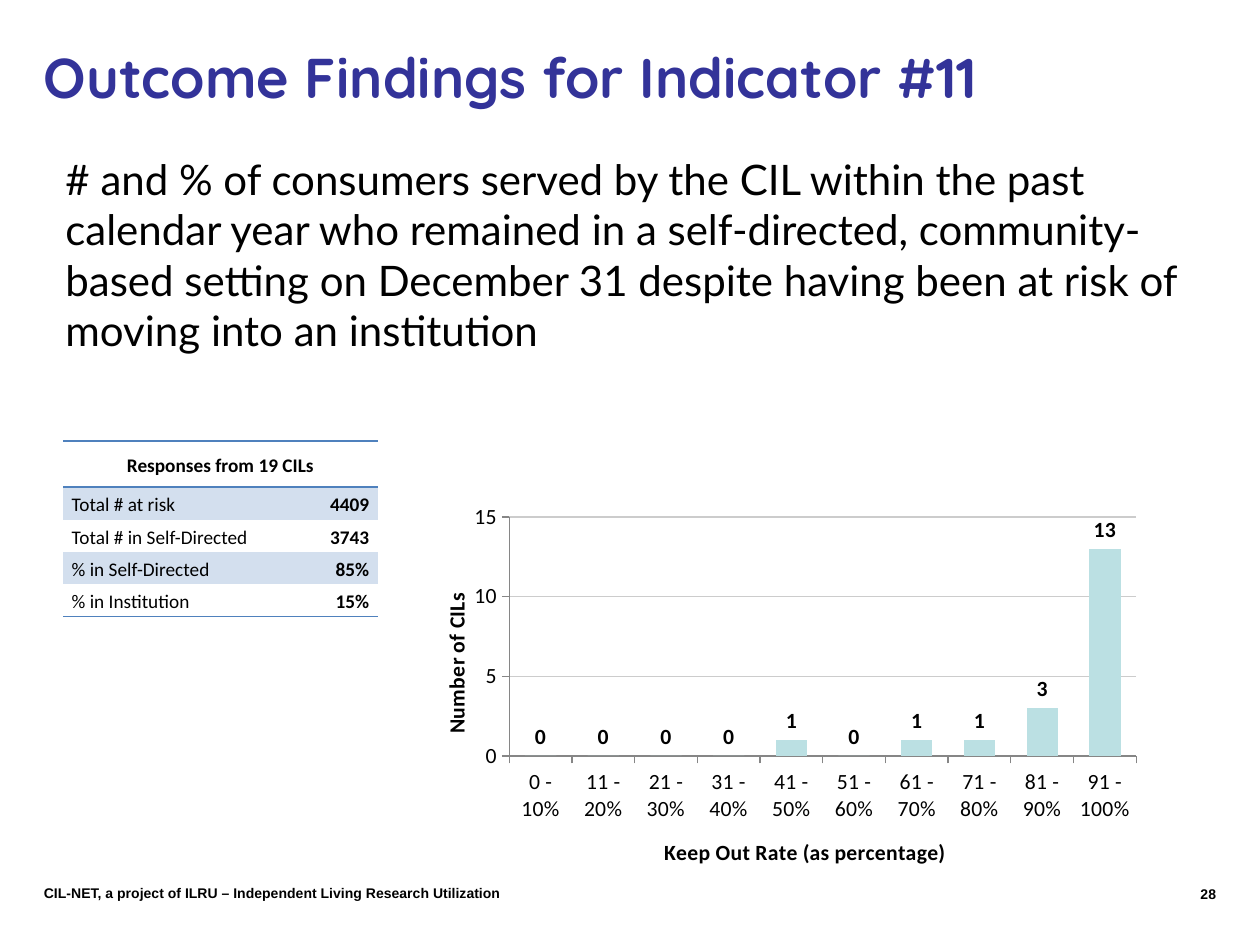
from lxml import etree
from pptx import Presentation
from pptx import util as u
from pptx.chart import data as chart_data
from pptx.dml import color
from pptx.enum import chart as chart_enum, text
from pptx.oxml import ns

Pt = u.Pt


def rgb(value):
    return color.RGBColor.from_string(value)


def write(frame, content, font="Calibri", size=11, fill="000000", bold=False,
          align=text.PP_ALIGN.LEFT, anchor=text.MSO_ANCHOR.TOP, spacing=None):
    frame.word_wrap = True
    frame.vertical_anchor = anchor
    paragraph = frame.paragraphs[0]
    paragraph.alignment = align
    paragraph.line_spacing = spacing
    run = paragraph.add_run()
    run.text = content
    run.font.name = font
    run.font.size = Pt(size)
    run.font.bold = bold
    run.font.color.rgb = rgb(fill)


presentation = Presentation()
presentation.slide_width = Pt(720)
presentation.slide_height = Pt(540)
slide = presentation.slides.add_slide(presentation.slide_layouts[6])

footer = {"font": "Arial", "size": 8, "bold": True}
boxes = [
    ((18, 12.24, 606, 62.64), "Outcome Findings for Indicator #11",
     {"font": "Quicksand", "size": 32, "fill": "333399", "bold": True,
      "anchor": text.MSO_ANCHOR.MIDDLE}),
    ((30.3, 84.24, 666, 131.76),
     "# and % of consumers served by the CIL within the past calendar year who "
     "remained in a self-directed, community-based setting on December 31 "
     "despite having been at risk of moving into an institution",
     {"font": "Lato", "size": 24}),
    ((18, 501.84, 360, 16.56),
     "CIL-NET, a project of ILRU – Independent Living Research Utilization", footer),
    ((653.76, 502.56, 48.24, 19.44), "28", {**footer, "align": text.PP_ALIGN.RIGHT}),
]
for place, content, style in boxes:
    box = slide.shapes.add_textbox(*map(Pt, place))
    write(box.text_frame, content, **style)

rows = [
    ("Responses from 19 CILs", ""),
    ("Total # at risk", "4409"),
    ("Total # in Self-Directed", "3743"),
    ("% in Self-Directed", "85%"),
    ("% in Institution", "15%"),
]
table = slide.shapes.add_table(5, 2, Pt(36), Pt(252), Pt(180), Pt(100.4)).table
table.first_row = False
table.horz_banding = False
for column, width in zip(table.columns, (131, 49)):
    column.width = Pt(width)
for index, values in enumerate(rows):
    table.rows[index].height = Pt(18.5 if index else 26.4)
    ruled = {0: ("lnT", "lnB"), 1: ("lnT",), 4: ("lnB",)}.get(index, ())
    for column, content in enumerate(values):
        cell = table.cell(index, column)
        cell.margin_left = cell.margin_right = Pt(5)
        cell.margin_top = cell.margin_bottom = 0
        cell.vertical_anchor = text.MSO_ANCHOR.MIDDLE
        properties = cell._tc.get_or_add_tcPr()
        for side in ("lnL", "lnR", "lnT", "lnB"):
            line = etree.SubElement(properties, ns.qn("a:" + side), w=str(Pt(1)))
            if side in ruled:
                solid = etree.SubElement(line, ns.qn("a:solidFill"))
                etree.SubElement(solid, ns.qn("a:srgbClr"), val="4F81BD")
            else:
                etree.SubElement(line, ns.qn("a:noFill"))
        if index % 2:
            cell.fill.solid()
            cell.fill.fore_color.rgb = rgb("D3DFEE")
        else:
            cell.fill.background()
        if content:
            align = text.PP_ALIGN.RIGHT if column else text.PP_ALIGN.LEFT
            write(cell.text_frame, content, bold=index == 0 or column == 1,
                  align=align if index else text.PP_ALIGN.CENTER,
                  anchor=text.MSO_ANCHOR.MIDDLE, spacing=1.15)
table.cell(0, 0).merge(table.cell(0, 1))

data = chart_data.CategoryChartData()
data.categories = ["0 - 10%"] + [f"{low}1 - {low + 1}0%" for low in range(1, 10)]
data.add_series("Series 1", (0, 0, 0, 0, 1, 0, 1, 1, 3, 13))
chart = slide.shapes.add_chart(
    chart_enum.XL_CHART_TYPE.COLUMN_CLUSTERED,
    Pt(249.84), Pt(220.32), Pt(411.84), Pt(278.64), data).chart
chart.has_title = False
chart.has_legend = False
chart.font.name = "Calibri"
chart.font.size = Pt(12.4)
chart.font.color.rgb = rgb("000000")

for axis, title in ((chart.category_axis, "Keep Out Rate (as percentage)"),
                    (chart.value_axis, "Number of CILs")):
    write(axis.axis_title.text_frame, title, size=12.4, bold=True)
    axis.major_tick_mark = chart_enum.XL_TICK_MARK.OUTSIDE
    axis.format.line.color.rgb = rgb("868686")
    axis.format.line.width = Pt(0.75)
value_axis = chart.value_axis
value_axis.minimum_scale = 0
value_axis.maximum_scale = 15
value_axis.major_unit = 5
value_axis.major_gridlines.format.line.color.rgb = rgb("CCCCCC")
value_axis.major_gridlines.format.line.width = Pt(0.75)

plot = chart.plots[0]
plot.gap_width = 100
plot.vary_by_categories = False
fill = plot.series[0].format.fill
fill.solid()
fill.fore_color.rgb = rgb("BBE0E3")
plot.has_data_labels = True
labels = plot.data_labels
labels.show_value = True
labels.position = chart_enum.XL_LABEL_POSITION.OUTSIDE_END
labels.font.name = "Calibri"
labels.font.size = Pt(12.4)
labels.font.bold = True
labels.font.color.rgb = rgb("000000")

plot_area = chart._chartSpace.chart.plotArea
for old_layout in plot_area.findall(ns.qn("c:layout")):
    plot_area.remove(old_layout)
layout = etree.Element(ns.qn("c:layout"))
plot_area.insert(0, layout)
manual = etree.SubElement(layout, ns.qn("c:manualLayout"))
for name, value in (("layoutTarget", "inner"), ("xMode", "edge"), ("yMode", "edge"),
                    ("x", "0.1"), ("y", "0.27"), ("w", "0.87"), ("h", "0.49")):
    etree.SubElement(manual, ns.qn("c:" + name), val=value)

presentation.save("out.pptx")
